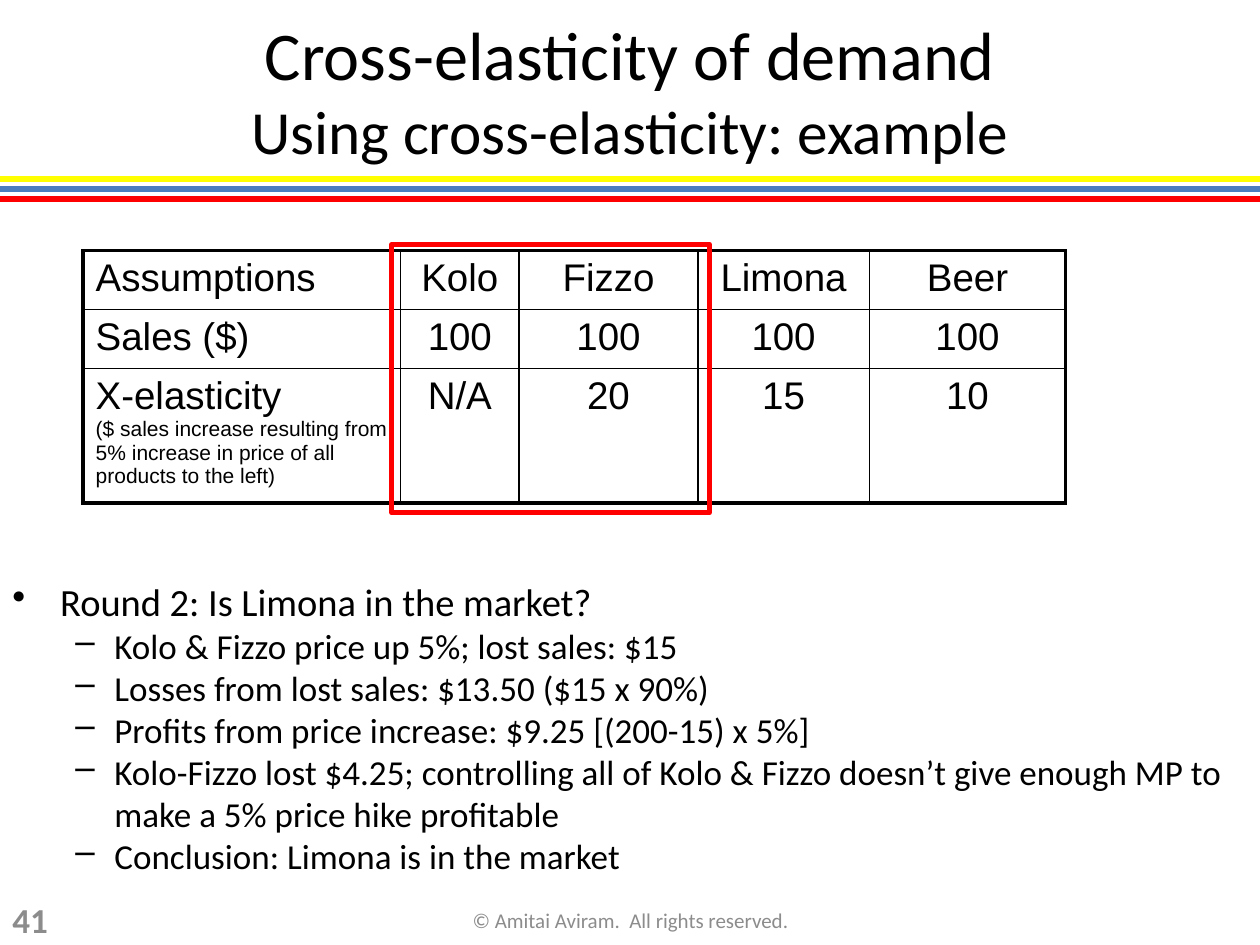
"""Build the cross-elasticity example slide."""
import dataclasses

import lxml.etree
import pptx
import pptx.dml.color
import pptx.enum.shapes
import pptx.enum.text
import pptx.oxml.ns
import pptx.util

Inches = pptx.util.Inches
Pt = pptx.util.Pt
qn = pptx.oxml.ns.qn
Align = pptx.enum.text.PP_ALIGN
Anchor = pptx.enum.text.MSO_ANCHOR


@dataclasses.dataclass(frozen=True)
class Theme:
    body_font: str = "Calibri"
    table_font: str = "Arial"
    ink: str = "000000"
    muted: str = "8C8C8C"
    yellow: str = "FFFF00"
    blue: str = "4B7EBC"
    red: str = "FF0000"
    title: float = 39
    subtitle: float = 35
    main: float = 22
    detail: float = 20
    small: float = 12
    rule: float = 3
    outer_border: float = 2.25
    inner_border: float = 1


def rgb(color):
    return pptx.dml.color.RGBColor.from_string(color)


class SlideBuilder:
    def __init__(self, slide, theme):
        self.slide = slide
        self.theme = theme

    def style(self, font, size, color=None, name=None, bold=False):
        font.size = Pt(size)
        font.name = name or self.theme.body_font
        font.color.rgb = rgb(color or self.theme.ink)
        font.bold = bold

    def rule(self, y, color):
        stripe = self.slide.shapes.add_connector(
            pptx.enum.shapes.MSO_CONNECTOR.STRAIGHT, Inches(0), Inches(y), Inches(10), Inches(y))
        stripe.line.color.rgb = rgb(color)
        stripe.line.width = Pt(self.theme.rule)
        lxml.etree.SubElement(stripe.element.spPr, qn("a:effectLst"))

    def frame(self, box, anchor=Anchor.MIDDLE):
        area = self.slide.shapes.add_textbox(*map(Inches, box)).text_frame
        area.word_wrap = True
        area.vertical_anchor = anchor
        return area

    def title(self, box, heading, subheading):
        paragraph = self.frame(box).paragraphs[0]
        paragraph.alignment = Align.CENTER
        self.style(paragraph.add_run().font, self.theme.title)
        paragraph.runs[0].text = heading
        paragraph.add_line_break()
        self.style(paragraph.add_run().font, self.theme.subtitle)
        paragraph.runs[1].text = subheading

    def label(self, box, text, size, align, bold=False):
        paragraph = self.frame(box).paragraphs[0]
        paragraph.text = text
        paragraph.alignment = align
        self.style(paragraph.font, size, self.theme.muted, bold=bold)

    def bullets(self, box, question, answers):
        area = self.frame(box, Anchor.TOP)
        self.bullet(area.paragraphs[0], question, 0, "•", self.theme.main, 0.38, 0.38)
        for answer in answers:
            self.bullet(area.add_paragraph(), answer, 1, "–", self.theme.detail, 0.81, 0.31)

    def bullet(self, paragraph, text, level, mark, size, margin, hanging):
        paragraph.text = text
        paragraph.level = level
        self.style(paragraph.font, size)
        properties = paragraph._p.get_or_add_pPr()
        properties.set("marL", str(Inches(margin)))
        properties.set("indent", str(-Inches(hanging)))
        symbol = lxml.etree.Element(qn("a:buChar"), char=mark)
        properties.insert(0, symbol)

    def table(self, left, top, widths, heights, rows, note):
        grid = self.slide.shapes.add_table(
            len(rows), len(widths), Inches(left), Inches(top),
            Inches(sum(widths)), Inches(sum(heights))).table
        grid.first_row = grid.horz_banding = False
        for column, width in zip(grid.columns, widths):
            column.width = Inches(width)
        for row, height in zip(grid.rows, heights):
            row.height = Inches(height)
        last_row, last_column = len(rows) - 1, len(widths) - 1
        for r, values in enumerate(rows):
            for c, value in enumerate(values):
                cell = grid.cell(r, c)
                cell.fill.background()
                paragraph = cell.text_frame.paragraphs[0]
                paragraph.text = value
                paragraph.alignment = Align.CENTER if c else Align.LEFT
                self.style(paragraph.font, self.theme.main, name=self.theme.table_font)
                self.borders(cell, {"lnL": c == 0, "lnR": c == last_column,
                                    "lnT": r == 0, "lnB": r == last_row})
        explained = grid.cell(last_row, 0).text_frame.paragraphs[0]
        explained.add_line_break()
        remark = explained.add_run()
        remark.text = note
        remark.font.size = Pt(self.theme.small)

    def borders(self, cell, edges):
        properties = cell._tc.get_or_add_tcPr()
        for position, (side, is_outer) in enumerate(edges.items()):
            weight = self.theme.outer_border if is_outer else self.theme.inner_border
            border = lxml.etree.Element(qn(f"a:{side}"), w=str(Pt(weight)))
            fill = lxml.etree.SubElement(border, qn("a:solidFill"))
            lxml.etree.SubElement(fill, qn("a:srgbClr"), val=self.theme.ink)
            properties.insert(position, border)

    def highlight(self, box):
        outline = self.slide.shapes.add_shape(
            pptx.enum.shapes.MSO_SHAPE.RECTANGLE, *map(Inches, box))
        outline.shadow.inherit = False
        outline.fill.background()
        outline.line.color.rgb = rgb(self.theme.red)
        outline.line.width = Pt(self.theme.rule)


def main():
    deck = pptx.Presentation()
    deck.slide_width, deck.slide_height = Inches(10), Inches(7.5)
    theme = Theme()
    builder = SlideBuilder(deck.slides.add_slide(deck.slide_layouts[6]), theme)

    for index, color in enumerate((theme.yellow, theme.blue, theme.red)):
        builder.rule(1.42 + 0.08 * index, color)
    builder.title((0, 0, 10, 1.42), "Cross-elasticity of demand", "Using cross-elasticity: example")
    builder.bullets((0, 4.54, 10, 2.71), "Round 2: Is Limona in the market?", (
        "Kolo & Fizzo price up 5%; lost sales: $15",
        "Losses from lost sales: $13.50 ($15 x 90%)",
        "Profits from price increase: $9.25 [(200-15) x 5%]",
        "Kolo-Fizzo lost $4.25; controlling all of Kolo & Fizzo doesn’t give enough MP to "
        "make a 5% price hike profitable",
        "Conclusion: Limona is in the market",
    ))
    builder.table(0.66, 1.99, (2.52, 0.94, 1.42, 1.36, 1.56), (0.44, 0.44, 1), (
        ("Assumptions", "Kolo", "Fizzo", "Limona", "Beer"),
        ("Sales ($)", "100", "100", "100", "100"),
        ("X-elasticity", "N/A", "20", "15", "10"),
    ), "($ sales increase resulting from 5% increase in price of all products to the left)")
    builder.highlight((3.11, 1.94, 2.52, 2.13))
    builder.label((3.42, 7.1, 3.17, 0.4), "© Amitai Aviram.  All rights reserved.",
                  theme.small, Align.CENTER)
    builder.label((0, 7.1, 0.67, 0.4), "41", theme.detail, Align.JUSTIFY, bold=True)
    deck.save("out.pptx")


if __name__ == "__main__":
    main()
